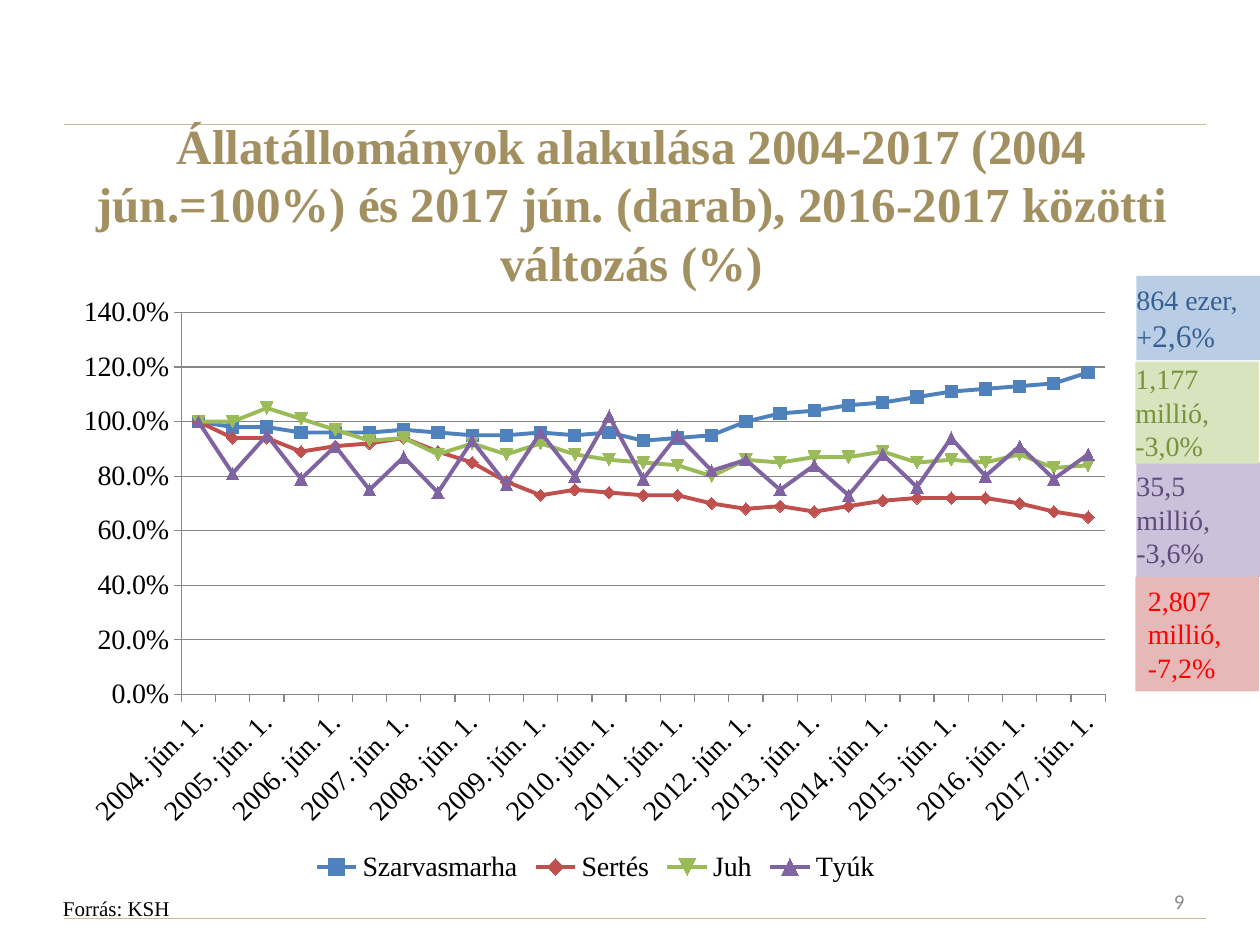
from dataclasses import dataclass

from lxml import etree
from pptx import Presentation
from pptx.chart.data import CategoryChartData
from pptx.dml.color import RGBColor
from pptx.enum.chart import XL_CHART_TYPE, XL_LEGEND_POSITION, XL_TICK_MARK
from pptx.enum.shapes import MSO_CONNECTOR, MSO_SHAPE
from pptx.enum.text import MSO_ANCHOR, PP_ALIGN
from pptx.oxml.ns import qn
from pptx.util import Cm, Pt

LINE_MARKERS = XL_CHART_TYPE.LINE_MARKERS
LEGEND_BOTTOM = XL_LEGEND_POSITION.BOTTOM
TICK_OUTSIDE = XL_TICK_MARK.OUTSIDE
STRAIGHT = MSO_CONNECTOR.STRAIGHT
RECTANGLE = MSO_SHAPE.RECTANGLE
TOP, MIDDLE = MSO_ANCHOR.TOP, MSO_ANCHOR.MIDDLE
LEFT, CENTER, RIGHT = PP_ALIGN.LEFT, PP_ALIGN.CENTER, PP_ALIGN.RIGHT
SERIF = "Times New Roman"
RULE_COLOR, GRID_COLOR = "C4BD97", "868686"


@dataclass
class Label:
    """A text block; each line is a list of (text, point size) runs."""
    place: tuple
    lines: list
    color: str
    fill: str | None = None
    font: str = SERIF
    bold: bool = False
    align: PP_ALIGN = LEFT
    anchor: MSO_ANCHOR = TOP
    wrap: bool = True
    inset_x: float = 0.25
    inset_y: float = 0.13


@dataclass
class Animal:
    name: str
    color: str
    percents: list


LABELS = [
    Label((1.3, 2.51, 22.86, 3.18),
          [[("Állatállományok alakulása 2004-2017 (2004 jún.=100%) és 2017 jún. "
             "(darab), 2016-2017 közötti változás (%)", 28)]],
          "A29061", bold=True, align=CENTER, anchor=MIDDLE),
    Label((1.02, 17.93, 2.69, 0.76), [[("Forrás: KSH", 12)]], "000000", wrap=False),
    Label((22.91, 5.56, 2.49, 1.7),
          [[("864 ezer,", 16)], [("+", 16), ("2,6", 18), ("%", 16)]],
          "376092", "B9CDE5", inset_x=0),
    Label((22.91, 9.32, 2.51, 2.31), [[("35,5 millió,", 16)], [("-3,6%", 16)]],
          "604A7B", "CCC1DA", inset_x=0),
    Label((22.89, 7.29, 2.49, 2.06),
          [[("1,177", 16)], [("millió,", 16)], [("-3,0%", 16)]],
          "77933C", "D7E4BD", inset_x=0, inset_y=0),
    Label((22.89, 11.63, 2.49, 2.31),
          [[("2,807", 16)], [("millió,", 16)], [("-7,2%", 16)]],
          "FF0000", "E6B9B8"),
    Label((18.21, 17.65, 5.92, 1.02), [[("9", 12)]], "8C8C8C",
          font="Calibri", align=RIGHT, anchor=MIDDLE),
]

ANIMALS = [
    Animal("Szarvasmarha", "4F81BD",
           [100, 98, 98, 96, 96, 96, 97, 96, 95, 95, 96, 95, 96, 93, 94, 95, 100,
            103, 104, 106, 107, 109, 111, 112, 113, 114, 118]),
    Animal("Sertés", "C0504D",
           [100, 94, 94, 89, 91, 92, 94, 89, 85, 78, 73, 75, 74, 73, 73, 70, 68,
            69, 67, 69, 71, 72, 72, 72, 70, 67, 65]),
    Animal("Juh", "9BBB59",
           [100, 100, 105, 101, 97, 93, 94, 88, 92, 88, 92, 88, 86, 85, 84, 80, 86,
            85, 87, 87, 89, 85, 86, 85, 88, 83, 84]),
    Animal("Tyúk", "8064A2",
           [100, 81, 95, 79, 91, 75, 87, 74, 93, 77, 96, 80, 102, 79, 95, 82, 86,
            75, 84, 73, 88, 76, 94, 80, 91, 79, 88]),
]


def rgb(color: str) -> RGBColor:
    return RGBColor.from_string(color)


def set_attributes(target, values: dict) -> None:
    for name, value in values.items():
        setattr(target, name, value)


def add_rule(slide, top: float) -> None:
    connector = slide.shapes.add_connector(STRAIGHT, Cm(1.3), Cm(top), Cm(24.31), Cm(top))
    connector.line.color.rgb = rgb(RULE_COLOR)
    connector.line.width = Pt(0.75)
    etree.SubElement(connector._element.spPr, qn("a:effectLst"))


def add_label(slide, label: Label) -> None:
    place = [Cm(length) for length in label.place]
    if label.fill:
        shape = slide.shapes.add_shape(RECTANGLE, *place)
        shape.shadow.inherit = False
        shape.fill.solid()
        shape.fill.fore_color.rgb = rgb(label.fill)
        shape.line.fill.background()
    else:
        shape = slide.shapes.add_textbox(*place)
    frame = shape.text_frame
    set_attributes(frame, {
        "word_wrap": label.wrap, "vertical_anchor": label.anchor,
        "margin_left": Cm(label.inset_x), "margin_right": Cm(label.inset_x),
        "margin_top": Cm(label.inset_y), "margin_bottom": Cm(label.inset_y),
    })
    for index, line in enumerate(label.lines):
        paragraph = frame.add_paragraph() if index else frame.paragraphs[0]
        paragraph.alignment = label.align
        for text, size in line:
            run = paragraph.add_run()
            run.text = text
            set_attributes(run.font, {"name": label.font, "size": Pt(size), "bold": label.bold})
            run.font.color.rgb = rgb(label.color)


def category_names() -> list[str]:
    names = [f"{year}. {month}. 1." for year in range(2004, 2018) for month in ("jún", "dec")]
    names[names.index("2014. dec. 1.")] = "2014.dec. 1"
    return names[:-1]


def set_plot_layout(chart, fractions: dict) -> None:
    """Fix the inner plot area as fractions of the chart."""
    plot_area = chart._chartSpace.find(".//" + qn("c:plotArea"))
    for layout in plot_area.findall(qn("c:layout")):
        plot_area.remove(layout)
    layout = etree.Element(qn("c:layout"))
    plot_area.insert(0, layout)
    manual = etree.SubElement(layout, qn("c:manualLayout"))
    values = {"layoutTarget": "inner", "xMode": "edge", "yMode": "edge", **fractions}
    for name, value in values.items():
        etree.SubElement(manual, qn(f"c:{name}")).set("val", str(value))


def slant_category_labels(axis) -> None:
    """Turn the labels by 45 degrees and show every second one."""
    axis.tick_labels.font.size = Pt(16)
    element = axis._element
    element.find(".//" + qn("a:bodyPr")).set("rot", "-2700000")
    skip = etree.Element(qn("c:tickLblSkip"))
    skip.set("val", "2")
    element.find(qn("c:noMultiLvlLbl")).addprevious(skip)


def add_livestock_chart(slide) -> None:
    data = CategoryChartData(number_format="0.0%")
    data.categories = category_names()
    for animal in ANIMALS:
        data.add_series(animal.name, [percent / 100 for percent in animal.percents])
    chart = slide.shapes.add_chart(
        LINE_MARKERS, Cm(1.3), Cm(5.69), Cm(21.41), Cm(12.22), data).chart
    set_attributes(chart.font, {"name": SERIF, "size": Pt(16)})
    chart.font.color.rgb = rgb("000000")
    set_attributes(chart, {"has_title": False, "has_legend": True})
    set_attributes(chart.legend, {"position": LEGEND_BOTTOM, "include_in_layout": False})
    chart.plots[0].vary_by_categories = False

    for series, animal in zip(chart.plots[0].series, ANIMALS):
        series.smooth = False
        series.format.line.color.rgb = rgb(animal.color)
        series.format.line.width = Pt(2.25)
        series.marker.size = 7
        marker = series.marker.format
        marker.fill.solid()
        marker.fill.fore_color.rgb = rgb(animal.color)
        marker.line.color.rgb = rgb(animal.color)

    values = chart.value_axis
    set_attributes(values, {"minimum_scale": 0, "maximum_scale": 1.4, "major_unit": 0.2,
                            "has_major_gridlines": True})
    set_attributes(values.tick_labels,
                   {"number_format": "0.0%", "number_format_is_linked": False})
    for axis in (values, chart.category_axis):
        axis.major_tick_mark = TICK_OUTSIDE
        axis.format.line.color.rgb = rgb(GRID_COLOR)
    values.major_gridlines.format.line.color.rgb = rgb(GRID_COLOR)
    slant_category_labels(chart.category_axis)
    set_plot_layout(chart, {"x": 0.11, "y": 0.05, "w": 0.87, "h": 0.63})


def main() -> None:
    presentation = Presentation()
    set_attributes(presentation, {"slide_width": Cm(25.4), "slide_height": Cm(19.05)})
    slide = presentation.slides.add_slide(presentation.slide_layouts[6])
    for top in (18.52, 2.51):
        add_rule(slide, top)
    for label in LABELS:
        add_label(slide, label)
    add_livestock_chart(slide)
    presentation.save("out.pptx")


if __name__ == "__main__":
    main()
